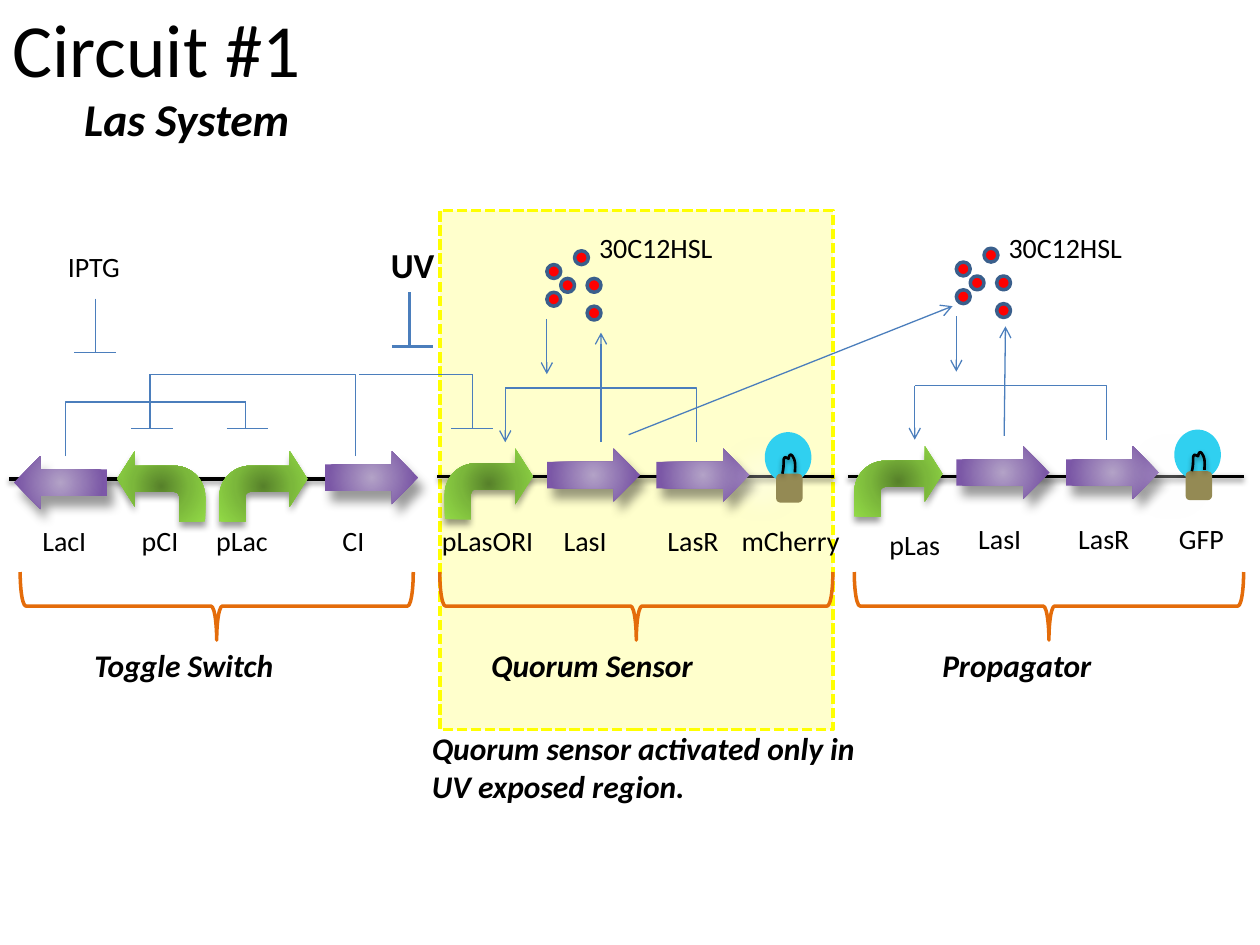
from lxml import etree
from pptx import Presentation
from pptx.dml.color import RGBColor
from pptx.enum.dml import MSO_LINE
from pptx.enum.shapes import MSO_CONNECTOR, MSO_SHAPE
from pptx.enum.text import MSO_ANCHOR, MSO_AUTO_SIZE, PP_ALIGN
from pptx.oxml.ns import qn
from pptx.util import Inches, Pt

STRAIGHT, ELBOW = MSO_CONNECTOR.STRAIGHT, MSO_CONNECTOR.ELBOW
RECTANGLE, ROUNDED = MSO_SHAPE.RECTANGLE, MSO_SHAPE.ROUNDED_RECTANGLE
OVAL, BRACE = MSO_SHAPE.OVAL, MSO_SHAPE.LEFT_BRACE
DOWN_ARROW, BENT_ARROW = MSO_SHAPE.DOWN_ARROW, MSO_SHAPE.BENT_ARROW
DASH = MSO_LINE.SQUARE_DOT
LEFT, CENTER = PP_ALIGN.LEFT, PP_ALIGN.CENTER
TOP, MIDDLE = MSO_ANCHOR.TOP, MSO_ANCHOR.MIDDLE
NO_FIT, GROW = MSO_AUTO_SIZE.NONE, MSO_AUTO_SIZE.SHAPE_TO_FIT_TEXT

BLACK, BLUE = "000000", "4B7EBC"
GREEN_STOPS = [(0, "57812A"), (50, "7BB73B"), (100, "92DA46")]
PURPLE_STOPS = [(0, "B3A2C7"), (80, "7B58A6"), (100, "7C57A8")]
LINE_SHADOW = (BLACK, 38, 3.1, 1.6, 90)
PROMOTER_SHADOW = (BLACK, 40, 4, 3, 90)
GENE_SHADOW = (BLACK, 40, 6, 7, 60)
LAMP_SHADOW = ("FFFFFF", 28, 11.8, 19.7, 141)
MOLECULES = [(0.11, 0.22), (0.32, 0.44), (0.32, 0.22), (0.22, 0), (0, 0.11), (0, 0.33)]
FILAMENT_START = (0, 0.17)
FILAMENT_CURVES = [
    ((0.01, 0.13), (0.01, 0.1), (0.01, 0.07)),
    ((0.01, 0.06), (0.01, 0.05), (0.02, 0.04)),
    ((0.03, 0.04), (0.04, 0.05), (0.05, 0.05)),
    ((0.05, 0.04), (0.06, 0), (0.08, 0.03)),
    ((0.11, 0.07), (0.1, 0.12), (0.1, 0.16)),
]


def color(value):
    return RGBColor.from_string(value)


def child(parent, tag, **attributes):
    element = etree.SubElement(parent, qn(tag))
    for name, value in attributes.items():
        element.set(name, str(value))
    return element


def set_alpha(color_element, percent):
    child(color_element, "a:alpha", val=percent * 1000)


def add_shadow(effects, shadow):
    value, alpha, blur, distance, angle = shadow
    outer = child(effects, "a:outerShdw", blurRad=Pt(blur), dist=Pt(distance),
                  dir=angle * 60000, algn="ctr", rotWithShape=0)
    set_alpha(child(outer, "a:srgbClr", val=value), alpha)


def set_gradient(shape, stops):
    shape.fill.background()
    properties = shape._element.spPr
    gradient = etree.Element(qn("a:gradFill"))
    stop_list = child(gradient, "a:gsLst")
    for position, value in stops:
        stop = child(stop_list, "a:gs", pos=position * 1000)
        child(stop, "a:srgbClr", val=value)
    circle = child(gradient, "a:path")
    circle.set("path", "circle")
    child(circle, "a:fillToRect", l=50000, t=50000, r=50000, b=50000)
    properties.replace(properties.find(qn("a:noFill")), gradient)


def style_shape(shape, fill=None, line=None, width=2, shadow=None):
    if isinstance(fill, list):
        set_gradient(shape, fill)
    elif fill:
        shape.fill.solid()
        shape.fill.fore_color.rgb = color(fill)
    else:
        shape.fill.background()
    if line:
        shape.line.color.rgb = color(line)
        shape.line.width = Pt(width)
    else:
        shape.line.fill.background()
    shape.shadow.inherit = False
    if shadow:
        add_shadow(shape._element.spPr.find(qn("a:effectLst")), shadow)


def add_block(slide, kind, left, top, width, height, **style):
    shape = slide.shapes.add_shape(kind, Inches(left), Inches(top),
                                   Inches(width), Inches(height))
    style_shape(shape, **style)
    return shape


def add_line(slide, start, end, width=0.75, line=BLUE, arrow=False, kind=STRAIGHT, shadow=None):
    connector = slide.shapes.add_connector(kind, *map(Inches, start + end))
    connector.line.color.rgb = color(line)
    connector.line.width = Pt(width)
    properties = connector._element.spPr
    if arrow:
        child(properties.find(qn("a:ln")), "a:tailEnd", type="arrow")
    if kind == ELBOW:
        guides = properties.find(qn("a:prstGeom")).get_or_add_avLst()
        child(guides, "a:gd", name="adj1", fmla="val 0")
    effects = child(properties, "a:effectLst")
    if shadow:
        add_shadow(effects, shadow)


def write_text(shape, text, size, bold=False, italic=False, align=LEFT, anchor=TOP, fit=GROW):
    frame = shape.text_frame
    frame.word_wrap = True
    frame.auto_size = fit
    frame.vertical_anchor = anchor
    paragraph = frame.paragraphs[0]
    paragraph.alignment = align
    run = paragraph.add_run()
    run.text = text
    run.font.name = "Calibri"
    run.font.size = Pt(size)
    run.font.bold = bold
    run.font.italic = italic
    run.font.color.rgb = color(BLACK)


def add_text(slide, text, left, top, width, height, size, **style):
    box = slide.shapes.add_textbox(Inches(left), Inches(top), Inches(width), Inches(height))
    write_text(box, text, size, **style)


def add_label(slide, text, left, top, width=1.27):
    add_text(slide, text, left, top, width, 0.37, 16, align=CENTER)


def add_heading(slide, text, left, top, width, height, size=18):
    add_text(slide, text, left, top, width, height, size, bold=True, italic=True)


def add_promoter(slide, left, top, mirrored=False):
    shape = add_block(slide, BENT_ARROW, left, top, 0.7, 0.56,
                      fill=GREEN_STOPS, shadow=PROMOTER_SHADOW)
    for index, value in enumerate((0.37, 0.394, 0.25, 0.438)):
        shape.adjustments[index] = value
    if mirrored:
        shape._element.spPr.find(qn("a:xfrm")).set("flipH", "1")


def add_gene(slide, left, top, rotation=270):
    shape = add_block(slide, DOWN_ARROW, left, top, 0.42, 0.74,
                      fill=PURPLE_STOPS, shadow=GENE_SHADOW)
    shape.rotation = rotation


def add_baseline(slide, left, right, top):
    add_line(slide, (left, top), (right, top), 2, BLACK, shadow=LINE_SHADOW)


def add_repressor(slide, x, top, bottom, bar_left, width=0.75):
    add_line(slide, (x, top), (x, bottom), width)
    add_line(slide, (bar_left, bottom), (bar_left + 0.33, bottom), width)


def add_lamp(slide, left, top):
    add_block(slide, OVAL, left, top, 0.37, 0.4, fill="30D0F0", shadow=LAMP_SHADOW)
    add_block(slide, ROUNDED, left + 0.09, top + 0.33, 0.21, 0.23, fill="948A54")
    points = [FILAMENT_START]
    for control_1, control_2, end in FILAMENT_CURVES:
        corners = list(zip(points[-1], control_1, control_2, end))
        for step in range(1, 7):
            t = step / 6
            weights = ((1 - t) ** 3, 3 * t * (1 - t) ** 2, 3 * t * t * (1 - t), t ** 3)
            points.append(tuple(sum(w * c for w, c in zip(weights, axis)) for axis in corners))
    points = [(Inches(left + 0.14 + x), Inches(top + 0.16 + y)) for x, y in points]
    builder = slide.shapes.build_freeform(*points[0])
    builder.add_line_segments(points[1:], close=False)
    style_shape(builder.convert_to_shape(), line=BLACK, width=1.5, shadow=LINE_SHADOW)


def add_brace(slide, left, width):
    shape = add_block(slide, BRACE, left + width / 2 - 0.27, 4.81 - width / 2, 0.54, width,
                      line="E46C0A")
    shape.rotation = 270


def add_las_module(slide, x, y):
    add_promoter(slide, x, y)
    for offset in (0.97, 1.84):
        add_gene(slide, x + offset, y - 0.16)
    add_lamp(slide, x + 2.54, y - 0.13)
    corner = (x + 0.48, y - 0.48)
    add_line(slide, (x + 2, y - 0.05), corner, kind=ELBOW)
    add_line(slide, corner, (x + 0.48, y - 0.05), arrow=True)
    for dx, dy in MOLECULES:
        add_block(slide, OVAL, x + 0.81 + dx, y - 1.57 + dy, 0.11, 0.11,
                  fill="FF0000", line="3A5F8C")
    add_line(slide, (x + 0.81, y - 1.03), (x + 0.81, y - 0.59), arrow=True)
    add_label(slide, "30C12HSL", x + 1.04, 1.78)


def add_toggle_switch(slide):
    add_promoter(slide, 1.74, 3.58)
    add_promoter(slide, 0.93, 3.58, mirrored=True)
    add_gene(slide, 0.27, 3.46, rotation=90)
    add_gene(slide, 2.74, 3.42)
    add_line(slide, (2.82, 3.62), (1.19, 2.97), kind=ELBOW)
    add_line(slide, (0.52, 3.62), (1.95, 3.19), kind=ELBOW)
    add_line(slide, (2.85, 2.97), (3.75, 2.97))
    add_repressor(slide, 1.19, 2.97, 3.4, 1.04)
    add_repressor(slide, 1.95, 3.19, 3.4, 1.8)
    add_repressor(slide, 3.75, 2.97, 3.4, 3.58)
    add_repressor(slide, 3.25, 2.32, 2.75, 3.11, width=1.5)
    add_repressor(slide, 0.76, 2.37, 2.8, 0.59)
    add_label(slide, "IPTG", 0.11, 1.93)
    add_text(slide, "UV", 2.64, 1.88, 1.27, 0.44, 20, bold=True, align=CENTER)


def main():
    presentation = Presentation()
    presentation.slide_width, presentation.slide_height = Inches(10), Inches(7.5)
    slide = presentation.slides.add_slide(presentation.slide_layouts[5])
    title = slide.shapes.title
    title.left, title.top, title.width, title.height = map(Inches, (0, -0.25, 9, 1.25))
    write_text(title, "Circuit #1", 42.9, anchor=MIDDLE, fit=NO_FIT)
    add_heading(slide, "Las System", 0.57, 0.67, 2.08, 0.54, size=26)

    region = add_block(slide, RECTANGLE, 3.49, 1.67, 3.12, 4.12, fill="FFFF00", line="FFFF00")
    region.line.dash_style = DASH
    set_alpha(region._element.spPr.find(qn("a:solidFill"))[0], 20)
    for left, right, top in ((0.07, 3.21, 3.8), (3.47, 6.62, 3.78), (6.73, 9.87, 3.78)):
        add_baseline(slide, left, right, top)

    add_toggle_switch(slide)
    add_las_module(slide, 3.53, 3.56)
    add_las_module(slide, 6.78, 3.54)
    for start, end in (((4.77, 3.51), (4.77, 2.64)), ((7.97, 3.46), (7.98, 2.59)),
                       ((4.99, 3.45), (7.56, 2.43))):
        add_line(slide, start, end, arrow=True)

    for text, left, top, width in (
            ("LacI", 0, 4.11, 1.02), ("pCI", 0.76, 4.11, 1.02), ("pLac", 1.41, 4.11, 1.02),
            ("CI", 2.17, 4.11, 1.27), ("pLasORI", 3.36, 4.11, 1.02), ("LasI", 4.01, 4.11, 1.27),
            ("LasR", 4.99, 4.11, 1.02), ("mCherry", 5.64, 4.11, 1.27), ("pLas", 6.75, 4.14, 1.02),
            ("LasI", 7.3, 4.09, 1.27), ("LasR", 8.25, 4.09, 1.02), ("GFP", 8.9, 4.09, 1.27)):
        add_label(slide, text, left, top, width)
    for text, left, brace_left, brace_width in (
            ("Toggle Switch", 0.65, 0.16, 3.12), ("Quorum Sensor", 3.8, 3.49, 3.12),
            ("Propagator", 7.38, 6.78, 3.09)):
        add_brace(slide, brace_left, brace_width)
        add_heading(slide, text, left, 5.08, 2.71, 0.54)
    add_heading(slide, "Quorum sensor activated only in UV exposed region.", 3.33, 5.74, 3.8, 0.71)
    presentation.save("out.pptx")


if __name__ == "__main__":
    main()
